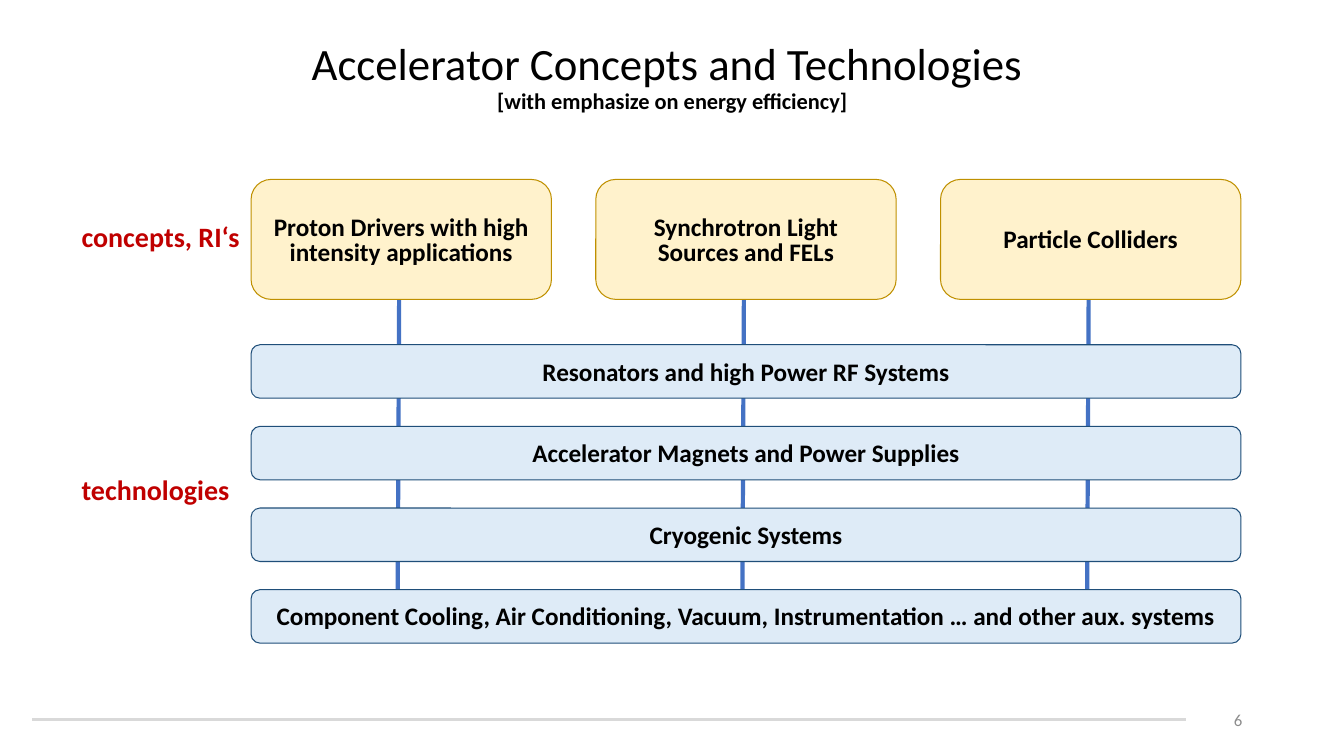
from lxml import etree
from pptx import Presentation
from pptx import util as u
from pptx.dml.color import RGBColor
from pptx.enum import shapes, text
from pptx.oxml.ns import qn

BLACK = RGBColor(0x00, 0x00, 0x00)
GREY = RGBColor(0x8C, 0x8C, 0x8C)
RULE_GREY = RGBColor(0xD9, 0xD9, 0xD9)
RED = RGBColor(0xC0, 0x00, 0x00)
LINK_BLUE = RGBColor(0x44, 0x72, 0xC4)
CREAM = RGBColor(0xFF, 0xF2, 0xCC)
GOLD = RGBColor(0xBF, 0x90, 0x00)
PALE_BLUE = RGBColor(0xDE, 0xEB, 0xF7)
NAVY = RGBColor(0x1F, 0x4E, 0x79)

CONCEPTS = ["Proton Drivers with high intensity applications",
            "Synchrotron Light Sources and FELs",
            "Particle Colliders"]
TECHNOLOGIES = ["Resonators and high Power RF Systems",
                "Accelerator Magnets and Power Supplies",
                "Cryogenic Systems",
                "Component Cooling, Air Conditioning, Vacuum, "
                "Instrumentation … and other aux. systems"]

# All lengths below are percentages of the slide's width or height.
LEFT, COL_PITCH, CARD_W = 18.68, 25.65, 22.35
CARD_TOP, CARD_H = 23.73, 15.87
BAR_TOP, BAR_PITCH, BAR_H = 45.6, 10.8, 7.07
BAR_W = COL_PITCH * (len(CONCEPTS) - 1) + CARD_W
LINK_X, LINK_SLANT, LINK_END = 29.7, 0.12, 82.13


class Deck:
    font = "Calibri"

    def __init__(self):
        self.prs = Presentation()
        self.prs.slide_width = u.Inches(13.33)
        self.prs.slide_height = u.Inches(7.5)
        self.s = self.prs.slides.add_slide(self.prs.slide_layouts[6])

    def place(self, x, y, w, h):
        """Turn percentages of the slide into lengths."""
        width, height = self.prs.slide_width, self.prs.slide_height
        return [u.Emu(round(share * full / 100)) for share, full
                in ((x, width), (y, height), (w, width), (h, height))]

    def style(self, r, size, color, bold):
        r.font.name = self.font
        r.font.size = u.Pt(size)
        r.font.bold = bold
        r.font.color.rgb = color

    def line(self, x1, y1, x2, y2, color, width):
        sp = self.s.shapes.add_connector(
            shapes.MSO_CONNECTOR.STRAIGHT, *self.place(x1, y1, x2, y2))
        sp.line.color.rgb = color
        sp.line.width = u.Pt(width)
        etree.SubElement(sp._element.spPr, qn("a:effectLst"))

    def text(self, box, content, size, color=BLACK, bold=False,
             align=text.PP_ALIGN.LEFT, anchor=text.MSO_ANCHOR.MIDDLE):
        sp = self.s.shapes.add_textbox(*self.place(*box))
        tf = sp.text_frame
        tf.word_wrap = True
        tf.vertical_anchor = anchor
        p = tf.paragraphs[0]
        p.text = content
        p.alignment = align
        for r in p.runs:
            self.style(r, size, color, bold)
        return tf

    def title(self, box, heading, subtitle):
        tf = self.text(box, heading + "\v" + subtitle, 32,
                       align=text.PP_ALIGN.CENTER)
        p = tf.paragraphs[0]
        p.line_spacing = 0.9
        self.style(p.runs[1], 16, BLACK, True)

    def label(self, box, content):
        tf = self.text(box, content, 20, RED, True, anchor=text.MSO_ANCHOR.TOP)
        tf.word_wrap = False
        tf.auto_size = text.MSO_AUTO_SIZE.SHAPE_TO_FIT_TEXT

    def block(self, box, content, fill, outline):
        sp = self.s.shapes.add_shape(
            shapes.MSO_SHAPE.ROUNDED_RECTANGLE, *self.place(*box))
        sp.shadow.inherit = False
        sp.fill.solid()
        sp.fill.fore_color.rgb = fill
        sp.line.color.rgb = outline
        sp.line.width = u.Pt(0.75)
        tf = sp.text_frame
        tf.word_wrap = True
        tf.vertical_anchor = text.MSO_ANCHOR.MIDDLE
        tf.margin_top, tf.margin_bottom = u.Inches(0.12), u.Inches(0.08)
        p = tf.paragraphs[0]
        p.text = content
        p.alignment = text.PP_ALIGN.CENTER
        p.line_spacing = u.Pt(18)
        self.style(p.runs[0], 18, BLACK, True)


def main():
    deck = Deck()
    deck.line(2.4, 95.2, 88.22, 95.2, RULE_GREY, 2.25)
    for col in range(len(CONCEPTS)):
        x = LINK_X + col * COL_PITCH
        deck.line(x, CARD_TOP + CARD_H, x - LINK_SLANT, LINK_END, LINK_BLUE, 3)

    deck.title((6.9, 3.73, 86.25, 13.07),
               "Accelerator Concepts and Technologies ",
               "[with emphasize on energy efficiency]")
    deck.text((87.7, 92.53, 5.48, 5.33), "6", 12, GREY,
              align=text.PP_ALIGN.RIGHT)

    for col, concept in enumerate(CONCEPTS):
        deck.block((LEFT + col * COL_PITCH, CARD_TOP, CARD_W, CARD_H),
                   concept, CREAM, GOLD)
    for row, technology in enumerate(TECHNOLOGIES):
        deck.block((LEFT, BAR_TOP + row * BAR_PITCH, BAR_W, BAR_H),
                   technology, PALE_BLUE, NAVY)

    deck.label((5.33, 28.4, 13.35, 5.87), "concepts, RI‘s")
    deck.label((5.33, 61.87, 13.2, 5.87), "technologies")
    deck.prs.save("out.pptx")


if __name__ == "__main__":
    main()
